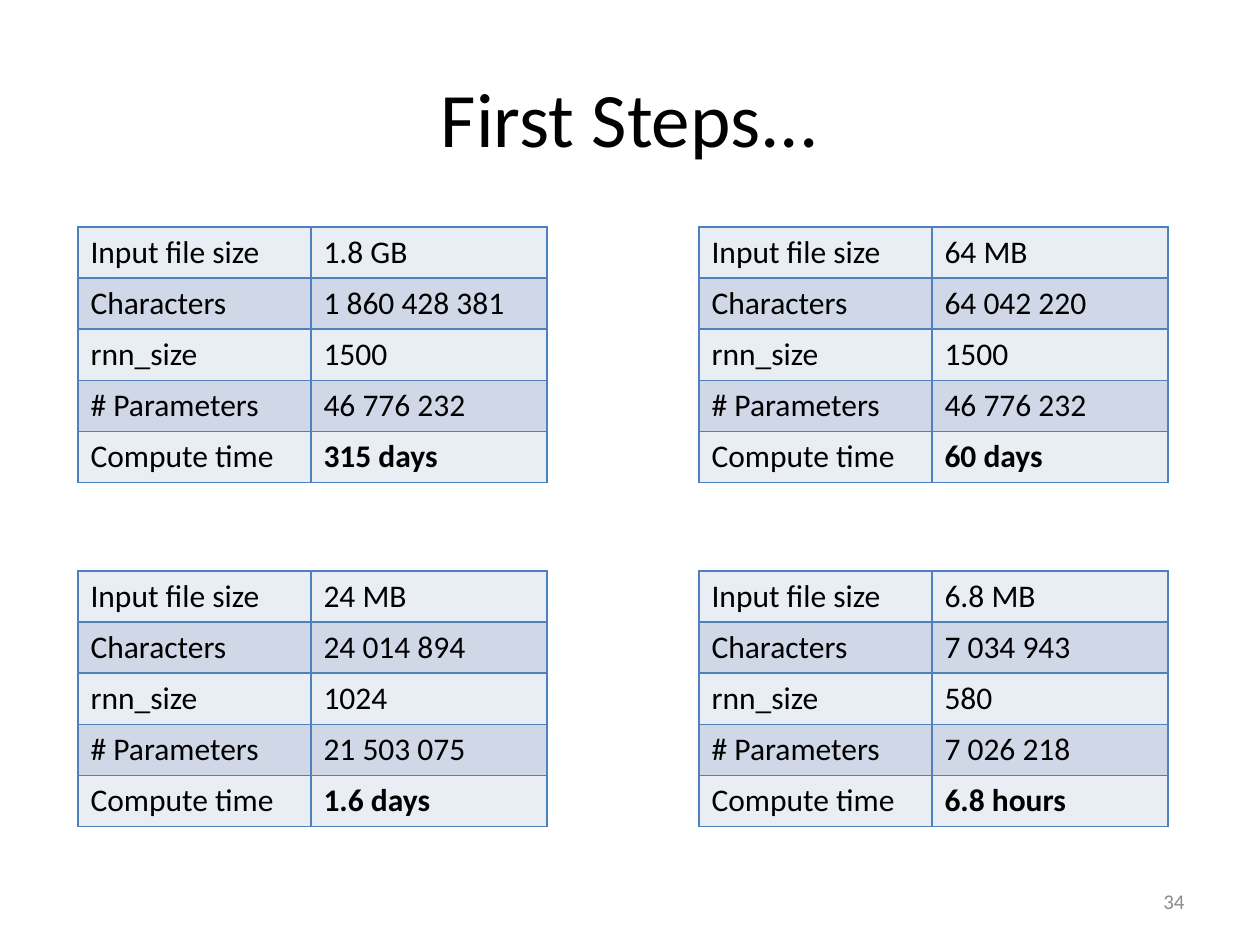
import pptx
import pptx.dml.color
import pptx.enum.text
import pptx.util
from lxml import etree
from pptx.oxml.ns import qn

RGBColor = pptx.dml.color.RGBColor
Anchor = pptx.enum.text.MSO_ANCHOR
Align = pptx.enum.text.PP_ALIGN

TITLE = "First Steps..."
PAGE_NUMBER = "34"
LABELS = ["Input file size", "Characters", "rnn_size", "# Parameters", "Compute time"]
# One list of values per table, laid out two tables to a row
EXPERIMENTS = [
    ["1.8 GB", "1 860 428 381", "1500", "46 776 232", "315 days"],
    ["64 MB", "64 042 220", "1500", "46 776 232", "60 days"],
    ["24 MB", "24 014 894", "1024", "21 503 075", "1.6 days"],
    ["6.8 MB", "7 034 943", "580", "7 026 218", "6.8 hours"],
]

FONT = "Calibri"
BLACK = RGBColor(0x00, 0x00, 0x00)
GRAY = RGBColor(0x8C, 0x8C, 0x8C)
BORDER = RGBColor(0x4F, 0x81, 0xBD)
BANDS = [RGBColor(0xE9, 0xED, 0xF4), RGBColor(0xD0, 0xD8, 0xE8)]

# Lengths in px, 126 to the inch
PAGE_SIZE = (1260, 945)
TITLE_BOX = (63, 38, 1134, 157)
NUMBER_BOX = (903, 876, 294, 50)
TABLE_LEFTS = [78, 699]
TABLE_TOPS = [227, 571]
COLUMN_WIDTHS = [233, 236]
ROW_HEIGHT = 51


def px(length):
    return pptx.util.Emu(round(length * 914400 / 126))


def style_text(frame, size, color, align, bold=False):
    para = frame.paragraphs[0]
    para.alignment = align
    font = para.runs[0].font
    font.name, font.size, font.bold = FONT, pptx.util.Pt(size), bold
    font.color.rgb = color


def add_borders(cell):
    properties = cell._tc.get_or_add_tcPr()
    for side in ("a:lnL", "a:lnR", "a:lnT", "a:lnB"):
        line = etree.SubElement(properties, qn(side), w=str(pptx.util.Pt(1)))
        fill = etree.SubElement(line, qn("a:solidFill"))
        etree.SubElement(fill, qn("a:srgbClr"), val=str(BORDER))


def add_experiment(page, values, left, top):
    table = page.shapes.add_table(
        len(LABELS), len(COLUMN_WIDTHS), px(left), px(top),
        px(sum(COLUMN_WIDTHS)), px(ROW_HEIGHT * len(LABELS))).table
    table.first_row = False
    for column, width in zip(table.columns, COLUMN_WIDTHS):
        column.width = px(width)
    for row, texts in enumerate(zip(LABELS, values)):
        table.rows[row].height = px(ROW_HEIGHT)
        for column, text in enumerate(texts):
            cell = table.cell(row, column)
            cell.text_frame.text = text
            is_result = column == 1 and row == len(LABELS) - 1
            style_text(cell.text_frame, 18, BLACK, Align.LEFT, is_result)
            add_borders(cell)
            cell.fill.solid()
            cell.fill.fore_color.rgb = BANDS[row % 2]


def main():
    deck = pptx.Presentation()
    deck.slide_width, deck.slide_height = map(px, PAGE_SIZE)
    page = deck.slides.add_slide(deck.slide_layouts[5])

    title = page.shapes.title
    title.left, title.top, title.width, title.height = map(px, TITLE_BOX)
    title.text_frame.text = TITLE
    title.text_frame.vertical_anchor = Anchor.MIDDLE
    style_text(title.text_frame, 44, BLACK, Align.CENTER)

    for index, values in enumerate(EXPERIMENTS):
        row, column = divmod(index, len(TABLE_LEFTS))
        add_experiment(page, values, TABLE_LEFTS[column], TABLE_TOPS[row])

    number = page.shapes.add_textbox(*map(px, NUMBER_BOX)).text_frame
    number.word_wrap = True
    number.vertical_anchor = Anchor.MIDDLE
    number.text = PAGE_NUMBER
    style_text(number, 12, GRAY, Align.RIGHT)

    deck.save("out.pptx")


if __name__ == "__main__":
    main()
